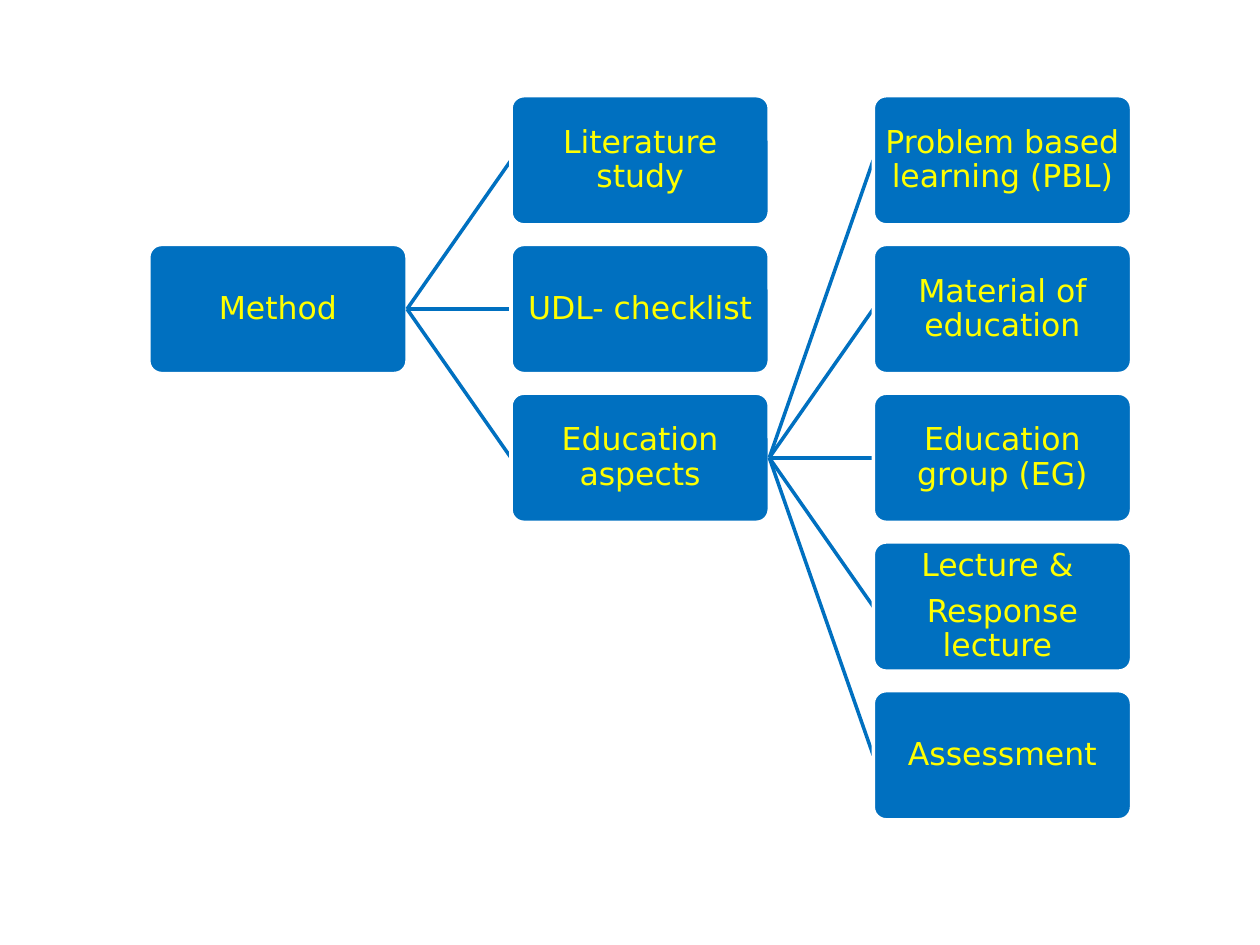
from dataclasses import dataclass

from pptx import Presentation
from pptx.dml.color import RGBColor
from pptx.enum.shapes import MSO_CONNECTOR, MSO_SHAPE
from pptx.enum.text import MSO_ANCHOR, PP_ALIGN
from pptx.oxml.xmlchemy import OxmlElement
from pptx.shapes.autoshape import Shape
from pptx.slide import Slide
from pptx.util import Pt

STRAIGHT = MSO_CONNECTOR.STRAIGHT
ROUNDED = MSO_SHAPE.ROUNDED_RECTANGLE
MIDDLE = MSO_ANCHOR.MIDDLE
CENTER = PP_ALIGN.CENTER


@dataclass(frozen=True)
class Theme:
    blue: RGBColor = RGBColor(0x00, 0x70, 0xC0)
    white: RGBColor = RGBColor(0xFF, 0xFF, 0xFF)
    yellow: RGBColor = RGBColor(0xFF, 0xFF, 0x00)
    font: str = "DejaVu Sans"
    text_size: float = 18
    line_width: float = 2


@dataclass(frozen=True)
class Grid:
    left: float = 85
    top: float = 54.7
    column_step: float = 207
    row_step: float = 85
    box_width: float = 147.6
    box_height: float = 73.8


@dataclass(frozen=True)
class Node:
    text: str
    column: int
    row: int
    children: tuple["Node", ...] = ()


THEME = Theme()
GRID = Grid()

ASPECTS = (
    "Problem based learning (PBL)",
    "Material of education",
    "Education group (EG)",
    "Lecture & \nResponse lecture ",
    "Assessment",
)
METHOD = Node("Method", 0, 1, (
    Node("Literature study", 1, 0),
    Node("UDL- checklist", 1, 1),
    Node("Education aspects", 1, 2,
         tuple(Node(text, 2, row) for row, text in enumerate(ASPECTS))),
))


def format_text(box: Shape) -> None:
    frame = box.text_frame
    frame.word_wrap = True
    frame.vertical_anchor = MIDDLE
    frame.margin_left = frame.margin_right = Pt(0.9)
    frame.margin_top = frame.margin_bottom = Pt(0.9)
    for para in frame.paragraphs:
        para.alignment = CENTER
        para.line_spacing = 0.9
        para.space_after = Pt(7)
        for span in para.runs:
            span.font.name = THEME.font
            span.font.size = Pt(THEME.text_size)
            span.font.color.rgb = THEME.yellow


def draw_box(page: Slide, node: Node) -> Shape:
    box = page.shapes.add_shape(
        ROUNDED,
        Pt(GRID.left + node.column * GRID.column_step),
        Pt(GRID.top + node.row * GRID.row_step),
        Pt(GRID.box_width),
        Pt(GRID.box_height),
    )
    box.adjustments[0] = 0.1
    box.shadow.inherit = False
    box.fill.solid()
    box.fill.fore_color.rgb = THEME.blue
    box.line.color.rgb = THEME.white
    box.line.width = Pt(THEME.line_width)
    box.text_frame.text = node.text
    format_text(box)
    return box


def draw_link(page: Slide, parent: Shape, child: Shape) -> None:
    """Join the right side of the parent to the left side of the child."""
    link = page.shapes.add_connector(STRAIGHT, 0, 0, 0, 0)
    link.begin_connect(parent, 3)
    link.end_connect(child, 1)
    link.line.color.rgb = THEME.blue
    link.line.width = Pt(THEME.line_width)
    link._element.spPr.append(OxmlElement("a:effectLst"))
    child._element.addprevious(link._element)


def draw_tree(page: Slide, node: Node) -> Shape:
    """Draw a node with everything below it, each link just behind its child."""
    box = draw_box(page, node)
    for child in node.children:
        draw_link(page, box, draw_tree(page, child))
    return box


def main() -> None:
    deck = Presentation()
    deck.slide_width = Pt(720)
    deck.slide_height = Pt(540)
    page = deck.slides.add_slide(deck.slide_layouts[6])
    draw_tree(page, METHOD)
    deck.save("out.pptx")


if __name__ == "__main__":
    main()
